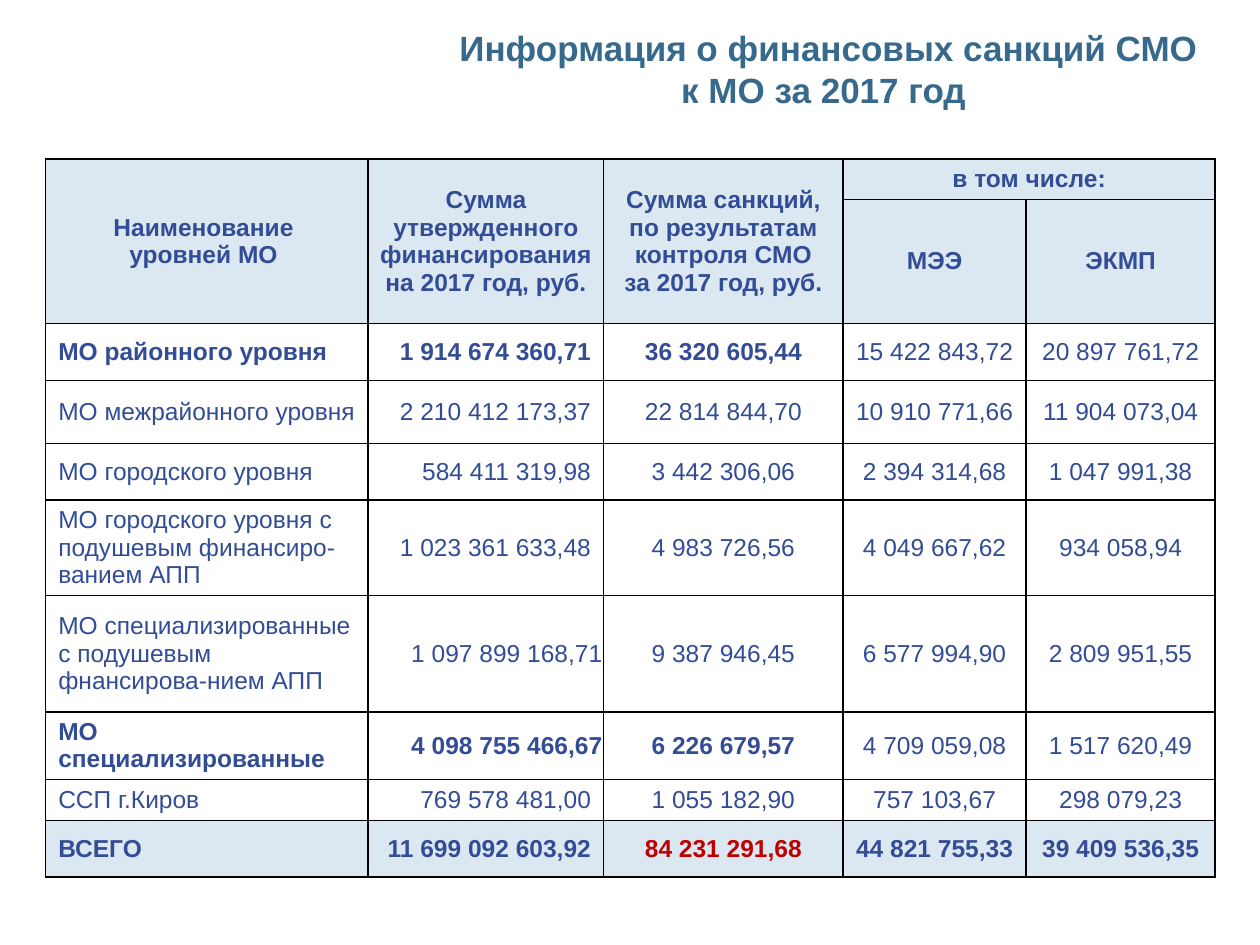
from lxml import etree
from pptx import Presentation
from pptx.dml.color import RGBColor
from pptx.enum.text import MSO_ANCHOR, PP_ALIGN
from pptx.oxml.ns import qn
from pptx.util import Pt

LEFT, CENTER, RIGHT = PP_ALIGN.LEFT, PP_ALIGN.CENTER, PP_ALIGN.RIGHT
TOP, MIDDLE = MSO_ANCHOR.TOP, MSO_ANCHOR.MIDDLE

TITLE_COLOR, TEXT_COLOR, TOTAL_COLOR = "36698C", "324C96", "C00000"
SHADE, WHITE, BLACK = "DBE8F1", "FFFFFF", "000000"

COLUMN_WIDTHS = [184.3, 134.6, 136.8, 104.6, 108]
ROW_HEIGHTS = [23, 71, 32.5, 36, 32.5, 54.5, 66.5, 38.5, 23.5, 32.5]
COLUMN_ALIGNMENTS = [LEFT, RIGHT, CENTER, CENTER, CENTER]
WIDE_MARGINS = (7.2, 1, 7.2, 1)
HEADER_MARGINS = (0, 1, 0, 1)
TIGHT_MARGINS = (0.72, 0.72, 0.72, 0)

HEADERS = [
    (0, 0, "Наименование \nуровней МО "),
    (0, 1, "Сумма утвержденного финансирования на 2017 год, руб."),
    (0, 2, "Сумма санкций,\vпо результатам контроля СМО\vза 2017 год, руб."),
    (0, 3, "в том числе:"),
    (1, 3, "МЭЭ"),
    (1, 4, "ЭКМП"),
]
LEVELS = [
    ["МО районного уровня", "1 914 674 360,71", "36 320 605,44",
     "15 422 843,72", "20 897 761,72"],
    ["МО межрайонного уровня", "2 210 412 173,37", "22 814 844,70",
     "10 910 771,66", "11 904 073,04"],
    ["МО городского уровня", "584 411 319,98", "3 442 306,06",
     "2 394 314,68", "1 047 991,38"],
    ["МО городского уровня с подушевым финансиро-ванием АПП",
     "1 023 361 633,48", "4 983 726,56", "4 049 667,62", "934 058,94"],
    ["МО специализированные с подушевым фнансирова-нием АПП",
     "1 097 899 168,71", "9 387 946,45", "6 577 994,90", "2 809 951,55"],
    ["МО специализированные", "4 098 755 466,67", "6 226 679,57",
     "4 709 059,08", "1 517 620,49"],
    ["ССП г.Киров", "769 578 481,00", "1 055 182,90",
     "757 103,67", "298 079,23"],
    ["ВСЕГО", "11 699 092 603,92", "84 231 291,68",
     "44 821 755,33", "39 409 536,35"],
]
TOTAL = len(LEVELS) - 1
BOLD_LEVELS = (0, 5)
TIGHT_LEVELS = (4, 5)


def rgb(color):
    return RGBColor.from_string(color)


def write_text(text_frame, text, size=14, color=TEXT_COLOR, bold=False, alignment=CENTER):
    text_frame.text = text
    for paragraph in text_frame.paragraphs:
        paragraph.alignment = alignment
        for run in paragraph.runs:
            run.font.name = "Arial"
            run.font.size = Pt(size)
            run.font.bold = bold
            run.font.color.rgb = rgb(color)


def set_margins(target, margins):
    (target.margin_left, target.margin_top,
     target.margin_right, target.margin_bottom) = map(Pt, margins)


def add_borders(cell):
    properties = cell._tc.get_or_add_tcPr()
    for side in ("a:lnL", "a:lnR", "a:lnT", "a:lnB"):
        line = etree.SubElement(properties, qn(side), w=str(Pt(1)))
        fill = etree.SubElement(line, qn("a:solidFill"))
        etree.SubElement(fill, qn("a:srgbClr"), val=BLACK)


def fill_cell(cell, text, fill, margins, **text_format):
    cell.fill.solid()
    cell.fill.fore_color.rgb = rgb(fill)
    cell.vertical_anchor = MIDDLE
    set_margins(cell, margins)
    write_text(cell.text_frame, text, **text_format)


def add_title(slide):
    box = slide.shapes.add_textbox(Pt(244.4), Pt(11.5), Pt(458), Pt(42.5))
    text_frame = box.text_frame
    text_frame.word_wrap = True
    text_frame.vertical_anchor = TOP
    set_margins(text_frame, (3.6, 3.6, 3.6, 3.6))
    write_text(text_frame, "Информация о финансовых санкций СМО\vк МО за 2017 год ",
               size=20, color=TITLE_COLOR, bold=True)


def add_sanctions_table(slide):
    frame = slide.shapes.add_table(
        len(ROW_HEIGHTS), len(COLUMN_WIDTHS), Pt(26.1), Pt(90.9),
        Pt(sum(COLUMN_WIDTHS)), Pt(sum(ROW_HEIGHTS)))
    table = frame.table
    for column, width in zip(table.columns, COLUMN_WIDTHS):
        column.width = Pt(width)
    for row, height in zip(table.rows, ROW_HEIGHTS):
        row.height = Pt(height)
    for cell in table.iter_cells():
        add_borders(cell)
    for column in range(3):
        table.cell(0, column).merge(table.cell(1, column))
    table.cell(0, 3).merge(table.cell(0, 4))
    return table


def fill_headers(table):
    for row, column, text in HEADERS:
        fill_cell(table.cell(row, column), text, SHADE, HEADER_MARGINS, bold=True)


def fill_levels(table):
    for level, values in enumerate(LEVELS):
        is_total = level == TOTAL
        for column, text in enumerate(values):
            tight = level in TIGHT_LEVELS and column > 0
            fill_cell(
                table.cell(level + 2, column), text,
                SHADE if is_total else WHITE,
                TIGHT_MARGINS if tight else WIDE_MARGINS,
                color=TOTAL_COLOR if is_total and column == 2 else TEXT_COLOR,
                bold=is_total or (level in BOLD_LEVELS and column < 3),
                alignment=COLUMN_ALIGNMENTS[column])


def main():
    presentation = Presentation()
    presentation.slide_width, presentation.slide_height = Pt(720), Pt(540)
    slide = presentation.slides.add_slide(presentation.slide_layouts[6])
    add_title(slide)
    table = add_sanctions_table(slide)
    fill_headers(table)
    fill_levels(table)
    presentation.save("out.pptx")


if __name__ == "__main__":
    main()
